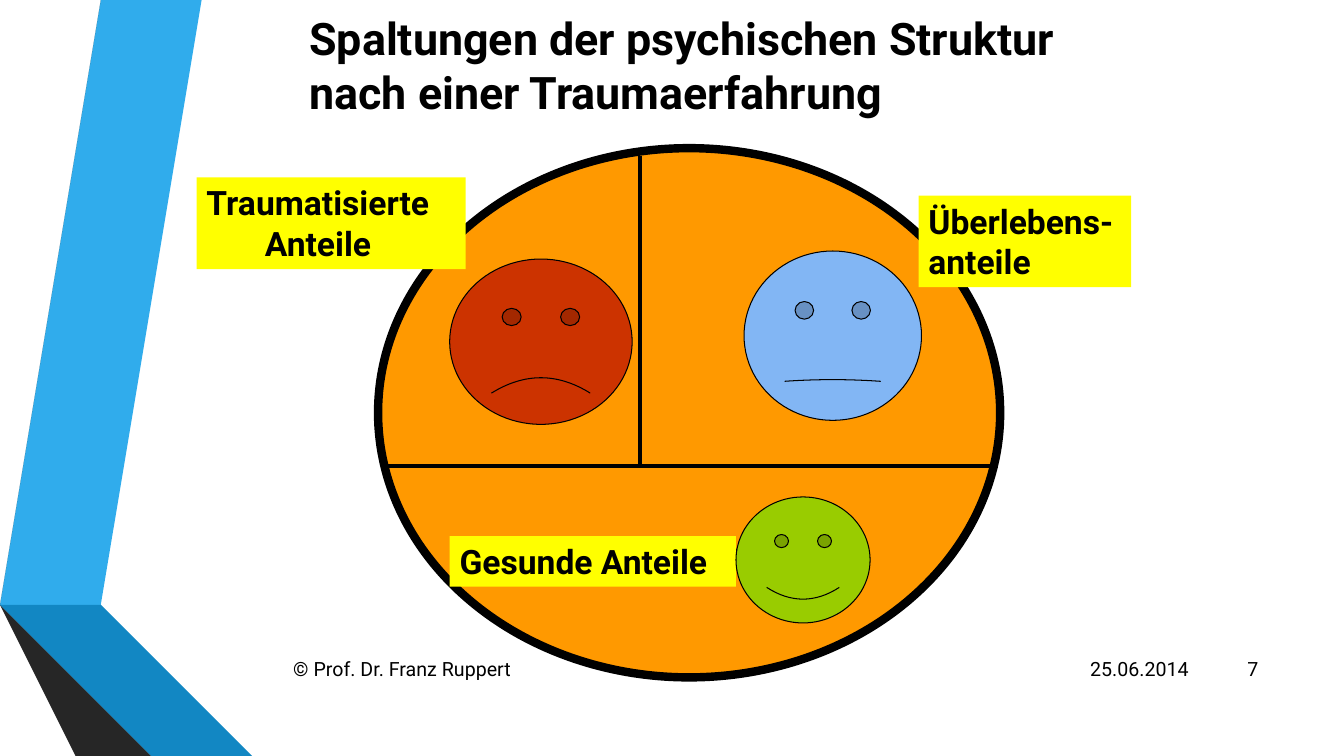
from pptx import Presentation
from pptx.dml.color import RGBColor
from pptx.enum import shapes, text
from pptx.oxml import xmlchemy
from pptx.util import Inches, Pt

BLACK = "000000"
YELLOW = "FFFF00"
RIBBONS = [
    ("30ACEC", [(0.5, 5.78), (0.77, 5.83), (1.73, 0), (1.45, 0)]),
    ("595959", [(1.39, 0), (1.11, 0), (0.16, 5.73), (0.44, 5.77)]),
    ("262626", [(0.16, 5.73), (1.45, 7.5), (1.51, 7.5)]),
    ("0C5A82", [(0.5, 5.79), (2.08, 7.5), (2.14, 7.5)]),
    ("1287C3", [(0.5, 5.79), (2.14, 7.5), (2.83, 7.5), (0.77, 5.83), (0.5, 5.78)]),
    ("404040", [(2.02, 7.5), (0.48, 5.83), (0.43, 5.77), (0.16, 5.73), (1.51, 7.5)]),
]


def color(value):
    return RGBColor.from_string(value)


class Deck:
    font = "Roboto"

    def __init__(self):
        self.prs = Presentation()
        self.prs.slide_width = Inches(13.33)
        self.prs.slide_height = Inches(7.5)
        self.s = self.prs.slides.add_slide(self.prs.slide_layouts[6])

    def paint(self, sp, fill, line=None, width=0.75):
        sp.shadow.inherit = False
        sp.fill.solid()
        sp.fill.fore_color.rgb = color(fill)
        if line:
            sp.line.color.rgb = color(line)
            sp.line.width = Pt(width)
        else:
            sp.line.fill.background()

    def ribbon(self, fill, points):
        builder = self.s.shapes.build_freeform(*points[0], scale=Inches(1))
        builder.add_line_segments(points[1:], close=True)
        self.paint(builder.convert_to_shape(), fill)

    def face(self, box, fill, smile, width=0.75):
        sp = self.s.shapes.add_shape(
            shapes.MSO_SHAPE.SMILEY_FACE, *map(Inches, box))
        sp.adjustments[0] = smile
        self.paint(sp, fill, BLACK, width)

    def set_text(self, sp, words, size, bold, align, anchor):
        tf = sp.text_frame
        tf.word_wrap = True
        tf.vertical_anchor = anchor
        tf.text = words
        for p in tf.paragraphs:
            p.alignment = align
            for r in p.runs:
                r.font.name = self.font
                r.font.size = Pt(size)
                r.font.bold = bold
                r.font.color.rgb = color(BLACK)

    def text(self, box, words, size=14, bold=False,
             align=text.PP_ALIGN.LEFT, anchor=text.MSO_ANCHOR.MIDDLE):
        sp = self.s.shapes.add_textbox(*map(Inches, box))
        self.set_text(sp, words, size, bold, align, anchor)

    def label(self, box, words, indent=0):
        sp = self.s.shapes.add_shape(
            shapes.MSO_SHAPE.RECTANGLE, *map(Inches, box))
        self.paint(sp, YELLOW)
        self.set_text(sp, words, 24, True, text.PP_ALIGN.LEFT, text.MSO_ANCHOR.TOP)
        if indent:
            p = sp.text_frame.paragraphs[-1]
            p._p.get_or_add_pPr().set("marL", str(Inches(indent)))

    def line(self, x1, y1, x2, y2):
        sp = self.s.shapes.add_connector(
            shapes.MSO_CONNECTOR.STRAIGHT, *map(Inches, (x1, y1, x2, y2)))
        sp.line.color.rgb = color(BLACK)
        sp.line.width = Pt(3)
        sp._element.spPr.append(xmlchemy.OxmlElement("a:effectLst"))


def main():
    deck = Deck()
    for fill, points in RIBBONS:
        deck.ribbon(fill, points)

    right = text.PP_ALIGN.RIGHT
    deck.text((10.64, 6.43, 1.25, 0.4), "25.06.2014", align=right)
    deck.text((11.98, 6.43, 0.6, 0.4), "7", align=right)
    deck.text((2.81, 6.43, 7.75, 0.4), "© Prof. Dr. Franz Ruppert")

    deck.face((3.75, 1.47, 6.17, 5.25), "FF9900", 0, width=6)
    deck.text((2.97, 0.06, 7.84, 1.17),
              "Spaltungen der psychischen Struktur\nnach einer Traumaerfahrung",
              size=32, bold=True, anchor=text.MSO_ANCHOR.TOP)

    deck.label((1.95, 1.76, 2.67, 0.91), "Traumatisierte\nAnteile", indent=0.58)
    deck.face((7.38, 2.49, 1.76, 1.68), "82B6F4", -0.005)
    deck.face((4.46, 2.57, 1.81, 1.64), "CC3300", -0.047)
    deck.label((4.46, 5.32, 2.84, 0.5), "Gesunde Anteile")
    deck.label((9.11, 1.94, 2.11, 0.91), "Überlebens-\nanteile")
    deck.face((7.3, 4.93, 1.33, 1.25), "99CC00", 0.047)

    deck.line(6.35, 1.55, 6.35, 4.62)
    deck.line(3.83, 4.62, 9.9, 4.62)
    deck.prs.save("out.pptx")


if __name__ == "__main__":
    main()
